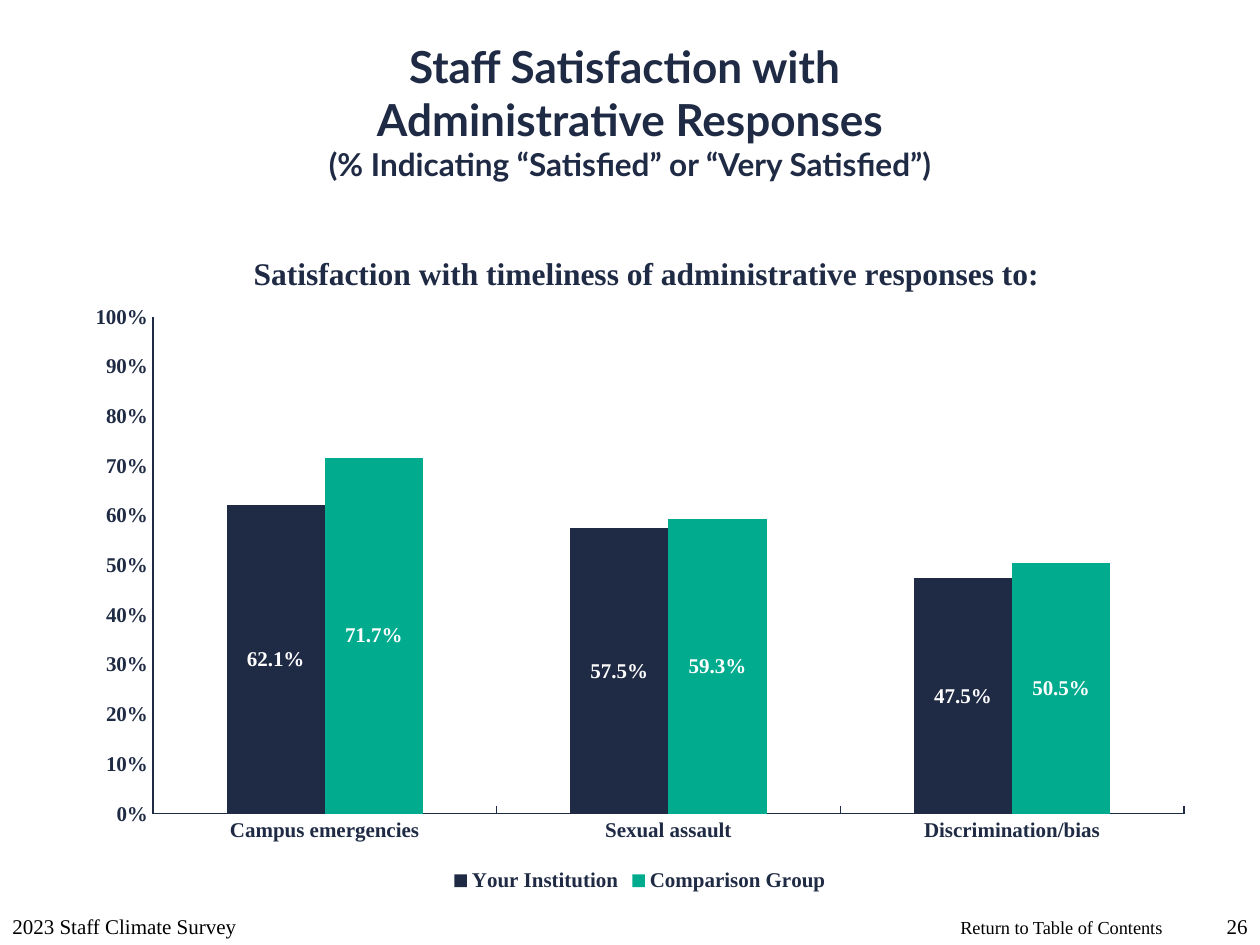
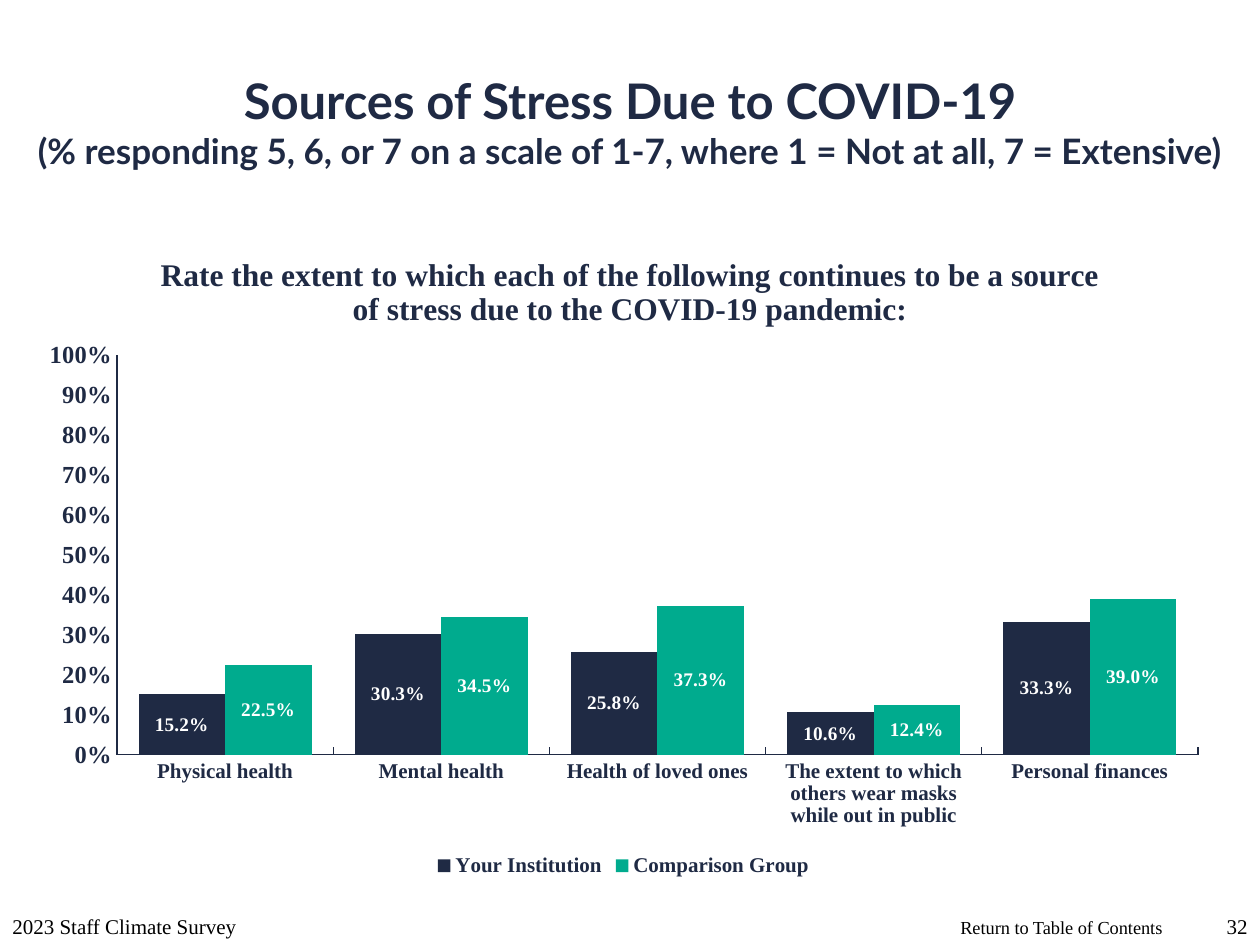
from pptx import Presentation
from pptx.chart import data
from pptx.dml.color import RGBColor
from pptx.enum import chart as kinds, text
from pptx.oxml import parse_xml
from pptx.oxml.ns import nsdecls, qn
from pptx.util import Emu, Pt

COLORS = {"navy": "1F2A44", "green": "00AB8E", "white": "FFFFFF", "black": "000000"}
HEAD, BODY = "Lato", "Times New Roman"
GROUPS = {"Your Institution": "navy", "Comparison Group": "green"}
WIDE, HIGH = 1260, 945
SCALE = 914400 / 126


def px(n):
    return Emu(round(n * SCALE))


def rgb(name):
    return RGBColor.from_string(COLORS[name])


def style(font, size, color="navy", face=BODY, bold=True):
    font.size, font.name, font.bold = Pt(size), face, bold
    font.color.rgb = rgb(color)


def write(frame, lines, sizes, align=text.PP_ALIGN.LEFT, anchor=text.MSO_ANCHOR.TOP,
          wrap=True, **look):
    """Fill a frame with one paragraph of lines, each with its own size."""
    frame.word_wrap, frame.vertical_anchor = wrap, anchor
    frame.auto_size = text.MSO_AUTO_SIZE.NONE
    para = frame.paragraphs[0]
    para.alignment = align
    for i, (line, size) in enumerate(zip(lines, sizes)):
        if i:
            para.add_line_break()
        run = para.add_run()
        run.text = line
        style(run.font, size, **look)


def label(slide, box, words, size, **look):
    shape = slide.shapes.add_textbox(*map(px, box))
    write(shape.text_frame, [words], [size], color="black", bold=False, **look)


def footer(slide, number):
    top, high = HIGH - 63, 63
    low = text.MSO_ANCHOR.BOTTOM
    label(slide, (948, 910, 229, 35), "Return to Table of Contents", 10.5, wrap=False)
    label(slide, (0, top, 400, high), "2023 Staff Climate Survey", 12, anchor=low)
    label(slide, (WIDE - 63, top, 63, high), str(number), 12, anchor=low,
          align=text.PP_ALIGN.RIGHT)


def heading(slide, top, lines, sizes):
    title = slide.shapes.title
    title.left, title.top, title.width, title.height = map(px, (0, top, WIDE, 158))
    write(title.text_frame, lines, sizes, face=HEAD,
          align=text.PP_ALIGN.CENTER, anchor=text.MSO_ANCHOR.MIDDLE)


def layout(box, part, inner=False):
    """Layout element that puts a part, in slide px, inside a chart box."""
    left, top, wide, high = box
    spots = {"x": (part[0] - left) / wide, "y": (part[1] - top) / high}
    if inner:
        spots |= {"w": part[2] / wide, "h": part[3] / high}
    target = '<c:layoutTarget val="inner"/>' if inner else ""
    modes = '<c:xMode val="edge"/><c:yMode val="edge"/>'
    vals = "".join(f'<c:{key} val="{val:.4f}"/>' for key, val in spots.items())
    return parse_xml(f'<c:layout {nsdecls("c")}><c:manualLayout>{target}{modes}{vals}'
                     "</c:manualLayout></c:layout>")


def clear(node):
    for old in node.findall(qn("c:layout")):
        node.remove(old)


def axis_look(axis, size, tick):
    axis.has_major_gridlines = False
    axis.major_tick_mark = tick
    axis.minor_tick_mark = kinds.XL_TICK_MARK.NONE
    axis.format.line.color.rgb = rgb("navy")
    axis.format.line.width = Pt(0.75)
    style(axis.tick_labels.font, size)


def bars(slide, box, plot_box, title_at, title, cats, rows, gap, scale_size, label_size):
    source = data.CategoryChartData(number_format="0.0%")
    source.categories = cats
    for name, row in zip(GROUPS, rows):
        source.add_series(name, row)
    chart = slide.shapes.add_chart(
        kinds.XL_CHART_TYPE.COLUMN_CLUSTERED, *map(px, box), source).chart
    style(chart.font, 10)

    # Chart title
    chart.has_title = True
    run = chart.chart_title.text_frame.paragraphs[0].add_run()
    run.text = title
    style(run.font, 18)
    node = chart._chartSpace.chart.find(qn("c:title"))
    clear(node)
    node.find(qn("c:tx")).addnext(layout(box, title_at))

    # Axes and plot area
    area = chart._chartSpace.chart.plotArea
    clear(area)
    area.insert(0, layout(box, plot_box, inner=True))
    axis_look(chart.category_axis, 12, kinds.XL_TICK_MARK.INSIDE)
    scale = chart.value_axis
    axis_look(scale, scale_size, kinds.XL_TICK_MARK.NONE)
    scale.minimum_scale, scale.maximum_scale, scale.major_unit = 0, 1, 0.1
    scale.tick_labels.number_format = "0%"
    scale.tick_labels.number_format_is_linked = False

    # Columns and their labels
    plot = chart.plots[0]
    plot.gap_width, plot.overlap, plot.vary_by_categories = gap, 0, False
    for group, color in zip(plot.series, GROUPS.values()):
        group.format.fill.solid()
        group.format.fill.fore_color.rgb = rgb(color)
        group.invert_if_negative = False
        marks = group.data_labels
        marks.show_value = True
        marks.position = kinds.XL_LABEL_POSITION.CENTER
        marks.number_format, marks.number_format_is_linked = "0.0%", False
        style(marks.font, label_size, "white")

    # Legend
    chart.has_legend = True
    chart.legend.position = kinds.XL_LEGEND_POSITION.BOTTOM
    chart.legend.include_in_layout = False
    style(chart.legend.font, 12)


PAGES = [
    dict(
        number=26,
        head=dict(
            top=32, sizes=[25.2, 25.2, 18],
            lines=["Staff Satisfaction with ", "Administrative Responses",
                   "(% Indicating “Satisfied” or “Very Satisfied”)"]),
        graph=dict(
            box=(73, 219, 1134, 678), plot_box=(153, 317, 1031, 497), title_at=(248, 248),
            title="Satisfaction with timeliness of administrative responses to:",
            cats=["Campus emergencies", "Sexual assault", "Discrimination/bias"],
            rows=[(0.621, 0.575, 0.475), (0.717, 0.593, 0.505)],
            gap=150, scale_size=12, label_size=12)),
    dict(
        number=32,
        head=dict(
            top=42, sizes=[28, 20],
            lines=["Sources of Stress Due to COVID-19",
                   "(% responding 5, 6, or 7 on a scale of 1-7, "
                   "where 1 = Not at all, 7 = Extensive)"]),
        graph=dict(
            box=(25, 220, 1197, 662), plot_box=(117, 355, 1081, 400), title_at=(155, 249),
            title="Rate the extent to which each of the following continues to be "
                  "a source of stress due to the COVID-19 pandemic:",
            cats=["Physical health", "Mental health", "Health of loved ones",
                  "The extent to which others wear masks while out in public",
                  "Personal finances"],
            rows=[(0.152, 0.303, 0.258, 0.106, 0.333), (0.225, 0.345, 0.373, 0.124, 0.39)],
            gap=50, scale_size=14, label_size=11)),
]


def main():
    deck = Presentation()
    deck.slide_width, deck.slide_height = px(WIDE), px(HIGH)
    for page in PAGES:
        slide = deck.slides.add_slide(deck.slide_layouts[5])
        heading(slide, **page["head"])
        bars(slide, **page["graph"])
        footer(slide, page["number"])
    deck.save("out.pptx")


if __name__ == "__main__":
    main()
